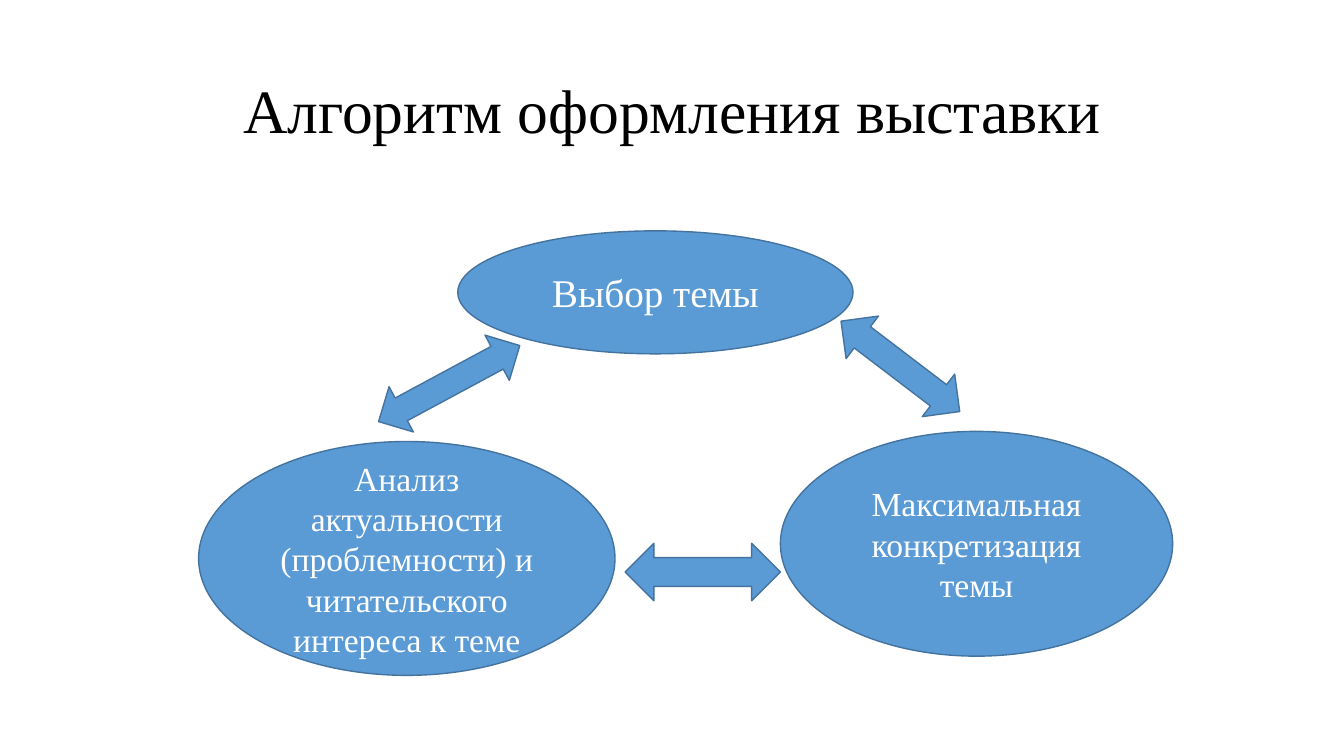
from pptx import Presentation
from pptx.dml.color import RGBColor
from pptx.enum.shapes import MSO_SHAPE as SHAPE
from pptx.enum.text import MSO_ANCHOR as ANCHOR, PP_ALIGN as ALIGN
from pptx.util import Inches, Pt

FONT = "Times New Roman"
COLORS = {"fill": "5B9BD5", "line": "43739E", "title": "000000", "label": "FFFFFF"}
SLIDE_W, SLIDE_H = 13.33, 7.5

TITLE = ("Алгоритм оформления выставки", (0.92, 0.4, 11.5, 1.45), 44)
# Text, box (left, top, width, height) in inches, text size
STEPS = [
    ("Выбор темы", (4.54, 2.29, 3.92, 1.22), 28),
    ("Анализ актуальности (проблемности) и читательского интереса к теме",
     (1.97, 4.38, 4.13, 2.32), 24),
    ("Максимальная конкретизация темы", (7.74, 4.28, 3.89, 2.23), 24),
]
# Box in inches, rotation in degrees
ARROWS = [
    ((3.66, 3.55, 1.59, 0.51), 151.7),
    ((8.19, 3.37, 1.48, 0.53), 37.3),
    ((6.2, 5.39, 1.54, 0.57), 0),
]


def rgb(name):
    return RGBColor.from_string(COLORS[name])


def write(sp, text, size, color):
    tf = sp.text_frame
    tf.word_wrap = True
    tf.vertical_anchor = ANCHOR.MIDDLE
    p = tf.paragraphs[0]
    p.alignment = ALIGN.CENTER
    r = p.add_run()
    r.text = text
    r.font.name = FONT
    r.font.size = Pt(size)
    r.font.color.rgb = rgb(color)
    return p


def add_figure(s, kind, box):
    sp = s.shapes.add_shape(kind, *map(Inches, box))
    sp.shadow.inherit = False
    sp.fill.solid()
    sp.fill.fore_color.rgb = rgb("fill")
    sp.line.color.rgb = rgb("line")
    sp.line.width = Pt(1)
    return sp


def main():
    prs = Presentation()
    prs.slide_width, prs.slide_height = Inches(SLIDE_W), Inches(SLIDE_H)
    s = prs.slides.add_slide(prs.slide_layouts[6])

    text, box, size = TITLE
    title = s.shapes.add_textbox(*map(Inches, box))
    write(title, text, size, "title").line_spacing = 0.9

    for text, box, size in STEPS:
        write(add_figure(s, SHAPE.OVAL, box), text, size, "label")

    for box, angle in ARROWS:
        add_figure(s, SHAPE.LEFT_RIGHT_ARROW, box).rotation = angle

    prs.save("out.pptx")


if __name__ == "__main__":
    main()
